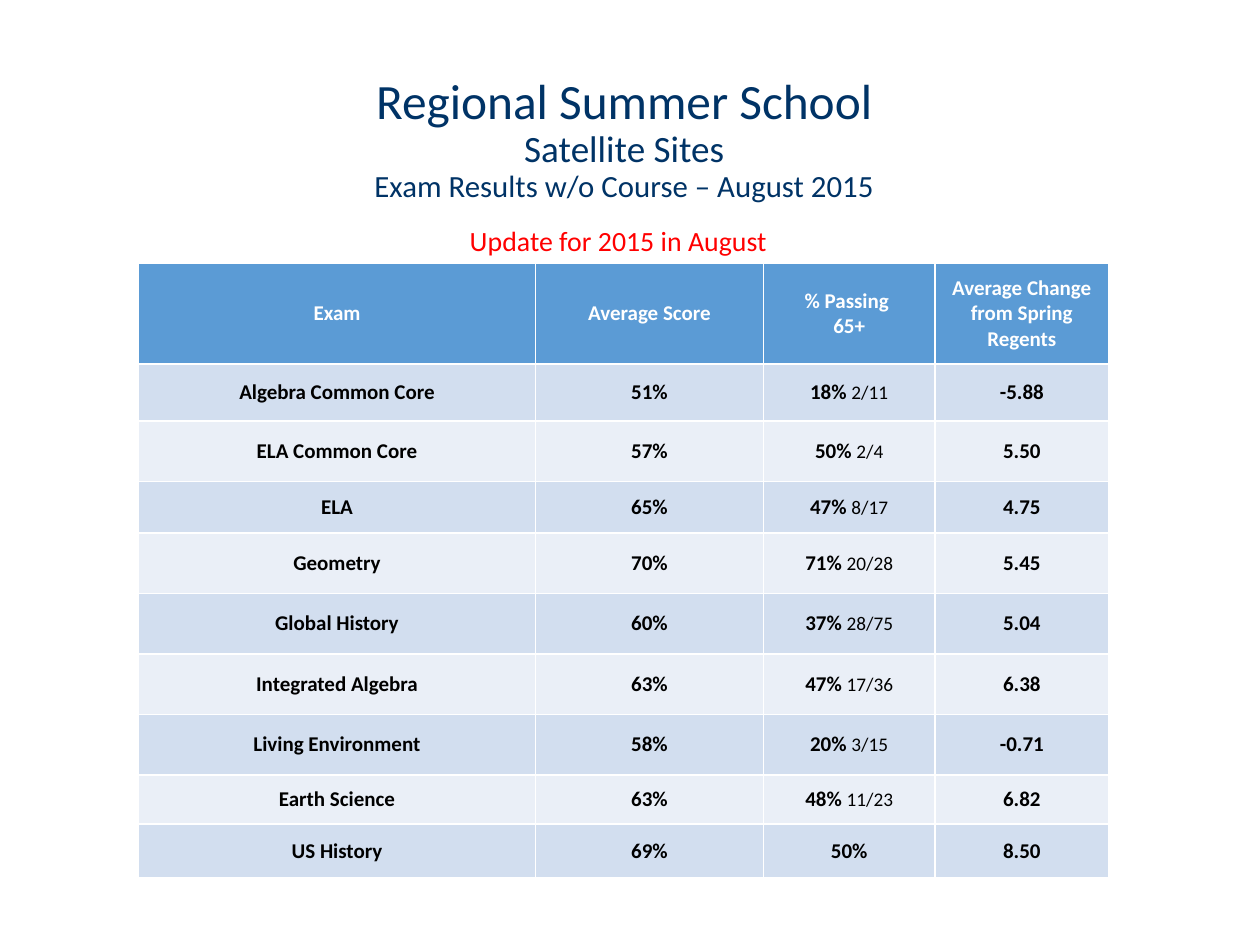
from pptx import Presentation
from pptx.dml.color import RGBColor
from pptx.enum.text import MSO_ANCHOR, PP_ALIGN
from pptx.util import Inches, Pt

CENTER, MIDDLE = PP_ALIGN.CENTER, MSO_ANCHOR.MIDDLE
FONT = "Calibri"
NAVY, RED, WHITE, BLACK = "003366", "FF0000", "FFFFFF", "000000"
HEADER_FILL, BAND_FILLS = "5B9BD5", ("D2DEEF", "EAEFF7")

# Content
TITLE_LINES = [
    ("Regional Summer School", 28.2),
    ("Satellite Sites", 21.2),
    ("Exam Results w/o Course – August 2015", 17.6),
]
UPDATE_NOTE = "Update for 2015 in August"
HEADERS = ["Exam", "Average Score", "% Passing \n65+", "Average Change from Spring Regents"]
# Exam, average score, percent passing, passed / taken, average change
RESULTS = [
    ("Algebra Common Core", "51%", "18%", "2/11", "-5.88"),
    ("ELA Common Core", "57%", "50%", "2/4", "5.50"),
    ("ELA", "65%", "47%", "8/17", "4.75"),
    ("Geometry", "70%", "71%", "20/28", "5.45"),
    ("Global History", "60%", "37%", "28/75", "5.04"),
    ("Integrated Algebra", "63%", "47%", "17/36", "6.38"),
    ("Living Environment", "58%", "20%", "3/15", "-0.71"),
    ("Earth Science", "63%", "48%", "11/23", "6.82"),
    ("US History", "69%", "50%", "", "8.50"),
]
COLUMN_WIDTHS = [3.15, 1.81, 1.36, 1.38]
ROW_HEIGHTS = [0.8, 0.45, 0.48, 0.41, 0.48, 0.48, 0.48, 0.48, 0.39, 0.43]


def color(value):
    return RGBColor.from_string(value)


def style_run(run, size, hex_color, bold=False):
    run.font.name = FONT
    run.font.size = Pt(size)
    run.font.bold = bold
    run.font.color.rgb = color(hex_color)


def add_text_box(slide, left, top, width, height):
    box = slide.shapes.add_textbox(Inches(left), Inches(top), Inches(width), Inches(height))
    box.text_frame.word_wrap = True
    return box.text_frame


def fill_cell(cell, text, fill, text_color, detail=""):
    cell.fill.solid()
    cell.fill.fore_color.rgb = color(fill)
    cell.vertical_anchor = MIDDLE
    cell.margin_left = cell.margin_right = Inches(0.07)
    cell.margin_top = cell.margin_bottom = Inches(0.05)
    cell.text_frame.text = f"{text} " if detail else text
    for paragraph in cell.text_frame.paragraphs:
        paragraph.alignment = CENTER
        for run in paragraph.runs:
            style_run(run, 12, text_color, bold=True)
    if detail:
        run = cell.text_frame.paragraphs[0].add_run()
        run.text = detail
        style_run(run, 11, text_color)


presentation = Presentation()
presentation.slide_width, presentation.slide_height = Inches(10), Inches(7.5)
slide = presentation.slides.add_slide(presentation.slide_layouts[6])

# Title: one paragraph with line breaks
title = add_text_box(slide, 0.53, 0.32, 8.85, 1.59)
title.vertical_anchor = MIDDLE
title.text = "\v".join(line for line, _ in TITLE_LINES)
title_paragraph = title.paragraphs[0]
title_paragraph.alignment = CENTER
title_paragraph.line_spacing = 0.9
for run, (_, size) in zip(title_paragraph.runs, TITLE_LINES):
    style_run(run, size, NAVY)

# Results table
table = slide.shapes.add_table(
    len(ROW_HEIGHTS), len(COLUMN_WIDTHS), Inches(1.1), Inches(2.09),
    Inches(sum(COLUMN_WIDTHS)), Inches(sum(ROW_HEIGHTS))).table
for column, width in zip(table.columns, COLUMN_WIDTHS):
    column.width = Inches(width)
for row, height in zip(table.rows, ROW_HEIGHTS):
    row.height = Inches(height)

for column, header in enumerate(HEADERS):
    fill_cell(table.cell(0, column), header, HEADER_FILL, WHITE)
for index, (exam, score, passing, count, change) in enumerate(RESULTS):
    fill = BAND_FILLS[index % 2]
    for column, text in enumerate((exam, score, passing, change)):
        detail = count if column == 2 else ""
        fill_cell(table.cell(index + 1, column), text, fill, BLACK, detail)

# Update note above the table
note = add_text_box(slide, 3.63, 1.73, 3.36, 0.37)
note.text = UPDATE_NOTE
style_run(note.paragraphs[0].runs[0], 15.9, RED)

presentation.save("out.pptx")
